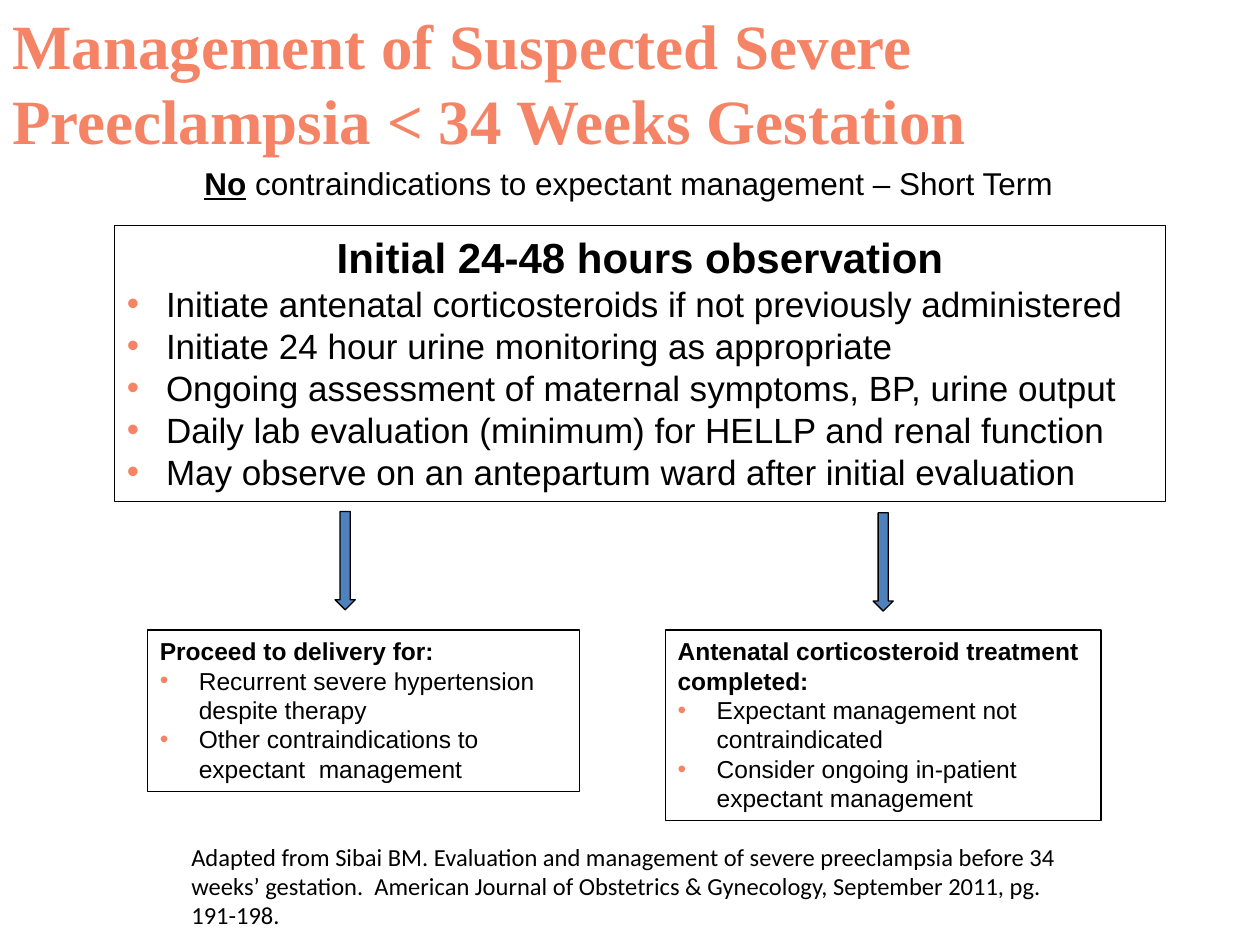
from dataclasses import dataclass

from lxml.etree import SubElement
from pptx import Presentation
from pptx.dml.color import RGBColor
from pptx.enum.shapes import MSO_SHAPE
from pptx.enum.text import MSO_ANCHOR, PP_ALIGN
from pptx.oxml.ns import qn
from pptx.util import Inches, Pt


@dataclass(frozen=True)
class Theme:
    coral: RGBColor = RGBColor(0xF5, 0x84, 0x66)
    blue: RGBColor = RGBColor(0x4F, 0x81, 0xBD)
    black: RGBColor = RGBColor(0, 0, 0)
    serif: str = "Times New Roman"
    sans: str = "Arial"
    source: str = "Calibri"
    title: int = 36
    head: int = 24
    step: int = 20
    lead: int = 18
    small: int = 14
    line: float = 0.75


THEME = Theme()


def style(run, size, font=THEME.sans, color=THEME.black, bold=False):
    run.font.size = Pt(size)
    run.font.name = font
    run.font.color.rgb = color
    run.font.bold = bold


def add_text(slide, place, text, size, font, color=THEME.black, bold=False):
    box = slide.shapes.add_textbox(*map(Inches, place))
    frame = box.text_frame
    frame.word_wrap = True
    frame.text = text
    style(frame.paragraphs[0].runs[0], size, font, color, bold)


def add_lead(slide, place, strong, rest):
    frame = slide.shapes.add_textbox(*map(Inches, place)).text_frame
    frame.word_wrap = True
    para = frame.paragraphs[0]
    para.alignment = PP_ALIGN.CENTER
    for text, bold in ((strong, True), (rest, False)):
        run = para.add_run()
        run.text = text
        style(run, THEME.lead, bold=bold)
        run.font.underline = bold


def add_shape(slide, kind, place, fill=None):
    shape = slide.shapes.add_shape(kind, *map(Inches, place))
    shape.shadow.inherit = False
    if fill is None:
        shape.fill.background()
    else:
        shape.fill.solid()
        shape.fill.fore_color.rgb = fill
    shape.line.color.rgb = THEME.black
    shape.line.width = Pt(THEME.line)
    return shape


def set_bullet(para):
    props = para._p.get_or_add_pPr()
    props.set("marL", str(Inches(0.31)))
    props.set("indent", str(-Inches(0.31)))
    color = SubElement(props, qn("a:buClr"))
    SubElement(color, qn("a:srgbClr"), val=str(THEME.coral))
    SubElement(props, qn("a:buFont"), typeface=THEME.sans)
    SubElement(props, qn("a:buChar"), char="•")


def add_panel(slide, place, head, items, sizes, align=PP_ALIGN.LEFT):
    frame = add_shape(slide, MSO_SHAPE.RECTANGLE, place).text_frame
    frame.word_wrap = True
    frame.vertical_anchor = MSO_ANCHOR.TOP
    frame.text = head
    first = frame.paragraphs[0]
    first.alignment = align
    style(first.runs[0], sizes[0], bold=True)
    for item in items:
        para = frame.add_paragraph()
        para.text = item
        para.alignment = PP_ALIGN.LEFT
        set_bullet(para)
        style(para.runs[0], sizes[1])


def main():
    deck = Presentation()
    deck.slide_width, deck.slide_height = Inches(10), Inches(7.5)
    slide = deck.slides.add_slide(deck.slide_layouts[6])

    # Title and lead line
    add_text(slide, (0, 0, 8.59, 1.31),
             "Management of Suspected Severe Preeclampsia < 34 Weeks Gestation",
             THEME.title, THEME.serif, THEME.coral, True)
    add_lead(slide, (1.17, 1.25, 7.71, 0.4), "No",
             " contraindications to expectant management – Short Term ")

    # Observation period
    add_panel(slide, (0.91, 1.79, 8.34, 2.19),
              "Initial 24-48 hours observation",
              ("Initiate antenatal corticosteroids if not previously administered",
               "Initiate 24 hour urine monitoring as appropriate",
               "Ongoing assessment of maternal symptoms, BP, urine output",
               "Daily lab evaluation (minimum) for HELLP and renal function",
               "May observe on an antepartum ward after initial evaluation"),
              (THEME.head, THEME.step), PP_ALIGN.CENTER)

    # Arrows to the two outcomes
    for left, top in ((2.66, 4.06), (6.93, 4.07)):
        add_shape(slide, MSO_SHAPE.DOWN_ARROW, (left, top, 0.16, 0.78), THEME.blue)

    # Outcomes
    small = (THEME.small, THEME.small)
    add_panel(slide, (1.17, 5, 3.43, 1.28), "Proceed to delivery for:",
              ("Recurrent severe hypertension despite therapy",
               "Other contraindications to expectant  management"), small)
    add_panel(slide, (5.28, 5, 3.46, 1.51),
              "Antenatal corticosteroid treatment completed:",
              ("Expectant management not contraindicated",
               "Consider ongoing in-patient expectant management"), small)

    # Citation
    add_text(slide, (1.42, 6.63, 7.15, 0.81),
             "Adapted from Sibai BM. Evaluation and management of severe "
             "preeclampsia before 34 weeks’ gestation.  American Journal of "
             "Obstetrics & Gynecology, September 2011, pg. 191-198.",
             THEME.small, THEME.source)

    deck.save("out.pptx")


if __name__ == "__main__":
    main()
